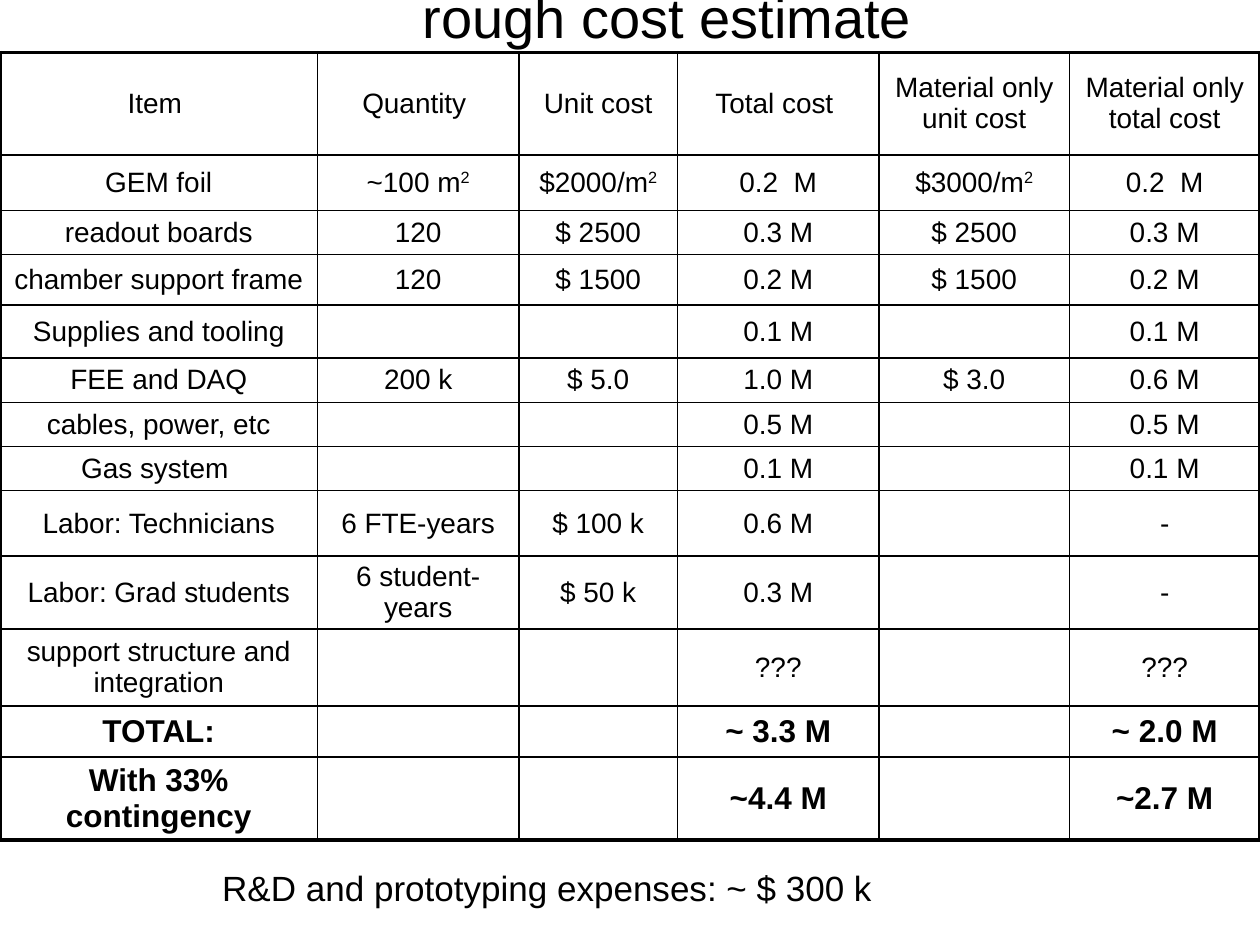
from lxml.etree import SubElement
from pptx import Presentation
from pptx.dml.color import RGBColor
from pptx.enum.text import MSO_ANCHOR, MSO_AUTO_SIZE, PP_ALIGN
from pptx.oxml.ns import qn
from pptx.util import Cm, Pt

COLORS = {"ink": "000000"}
COLUMN_WIDTHS = [6.4, 4.06, 3.2, 4.06, 3.84, 3.84]
ROW_HEIGHTS = [2.06, 1.12, 0.89, 1.02, 1.07, 0.89, 0.89, 0.89, 1.32, 1.47, 1.55, 0.96, 1.67]
COSTS = [
    ["Item ", "Quantity ", "Unit cost", "Total cost ", "Material only unit cost", "Material only total cost"],
    ["GEM foil", "~100 m^2", "$2000/m^2", "0.2  M", "$3000/m^2", "0.2  M"],
    ["readout boards", "120", "$ 2500", "0.3 M", "$ 2500", "0.3 M"],
    ["chamber support frame", "120", "$ 1500", "0.2 M", "$ 1500", "0.2 M"],
    ["Supplies and tooling", "", "", "0.1 M", "", "0.1 M"],
    ["FEE and DAQ", "200 k", "$ 5.0", "1.0 M", "$ 3.0", "0.6 M"],
    ["cables, power, etc", "", "", "0.5 M", "", "0.5 M"],
    ["Gas system ", "", "", "0.1 M", "", "0.1 M"],
    ["Labor: Technicians", "6 FTE-years", "$ 100 k", "0.6 M", "", "-"],
    ["Labor: Grad students", "6 student-years", "$ 50 k", "0.3 M", "", "-"],
    ["support structure and integration", "", "", "???", "", "???"],
    ["TOTAL:", "", "", "~ 3.3 M", "", "~ 2.0 M"],
    ["With 33% contingency", "", "", "~4.4 M", "", "~2.7 M"],
]
COMPACT_ROWS = range(1, 10)
SUMMARY_ROWS = range(11, 13)


class SlideBuilder:
    font_name = "Arial"
    inner_line = 1
    outer_line = 2.25

    def __init__(self, slide):
        self.slide = slide

    def add_run(self, paragraph, text, size, bold=False, superscript=False):
        run = paragraph.add_run()
        run.text = text
        run.font.name = self.font_name
        run.font.size = Pt(size)
        run.font.bold = bold
        run.font.color.rgb = RGBColor.from_string(COLORS["ink"])
        if superscript:
            run._r.get_or_add_rPr().set("baseline", "30000")

    def add_text(self, text, left, top, width, height, size, centered=False):
        shape = self.slide.shapes.add_textbox(Cm(left), Cm(top), Cm(width), Cm(height))
        frame = shape.text_frame
        frame.word_wrap = centered
        frame.auto_size = MSO_AUTO_SIZE.NONE if centered else MSO_AUTO_SIZE.SHAPE_TO_FIT_TEXT
        frame.vertical_anchor = MSO_ANCHOR.MIDDLE if centered else MSO_ANCHOR.TOP
        paragraph = frame.paragraphs[0]
        paragraph.alignment = PP_ALIGN.CENTER if centered else PP_ALIGN.LEFT
        self.add_run(paragraph, text, size)

    def set_borders(self, cell, outer_sides):
        properties = cell._tc.get_or_add_tcPr()
        for side in ("L", "R", "T", "B"):
            width = self.outer_line if side in outer_sides else self.inner_line
            line = SubElement(properties, qn(f"a:ln{side}"), w=str(Pt(width)))
            fill = SubElement(line, qn("a:solidFill"))
            SubElement(fill, qn("a:srgbClr"), val=COLORS["ink"])

    def fill_cell(self, cell, text, size, bold):
        cell.vertical_anchor = MSO_ANCHOR.MIDDLE
        paragraph = cell.text_frame.paragraphs[0]
        paragraph.alignment = PP_ALIGN.CENTER
        spacing = SubElement(paragraph._p.get_or_add_pPr(), qn("a:spcBef"))
        SubElement(spacing, qn("a:spcPct"), val="20000")
        base, _, exponent = text.partition("^")
        if base:
            self.add_run(paragraph, base, size, bold)
        if exponent:
            self.add_run(paragraph, exponent, size, bold, superscript=True)

    def add_table(self, rows, left, top, widths, heights):
        shape = self.slide.shapes.add_table(
            len(rows), len(widths), Cm(left), Cm(top), Cm(sum(widths)), Cm(sum(heights)))
        table = shape.table
        table.first_row = table.horz_banding = False
        for column, width in zip(table.columns, widths):
            column.width = Cm(width)
        for row_index, values in enumerate(rows):
            table.rows[row_index].height = Cm(heights[row_index])
            summary = row_index in SUMMARY_ROWS
            for column_index, text in enumerate(values):
                cell = table.cell(row_index, column_index)
                if row_index in COMPACT_ROWS:
                    cell.margin_top = cell.margin_bottom = 0
                edges = {"L": column_index == 0, "R": column_index == len(widths) - 1,
                         "T": row_index == 0, "B": row_index == len(rows) - 1}
                self.set_borders(cell, [side for side, outer in edges.items() if outer])
                cell.fill.background()
                self.fill_cell(cell, text, 18 if summary else 16, summary)


def main():
    presentation = Presentation()
    presentation.slide_width = Cm(25.4)
    presentation.slide_height = Cm(19.05)
    builder = SlideBuilder(presentation.slides.add_slide(presentation.slide_layouts[6]))
    builder.add_text("rough cost estimate", 6.15, 0, 14.6, 0.64, 32, centered=True)
    builder.add_table(COSTS, 0, 1.06, COLUMN_WIDTHS, ROW_HEIGHTS)
    builder.add_text("R&D and prototyping expenses: ~ $ 300 k", 4.23, 17.35, 13.74, 1.11, 20)
    presentation.save("out.pptx")


if __name__ == "__main__":
    main()
